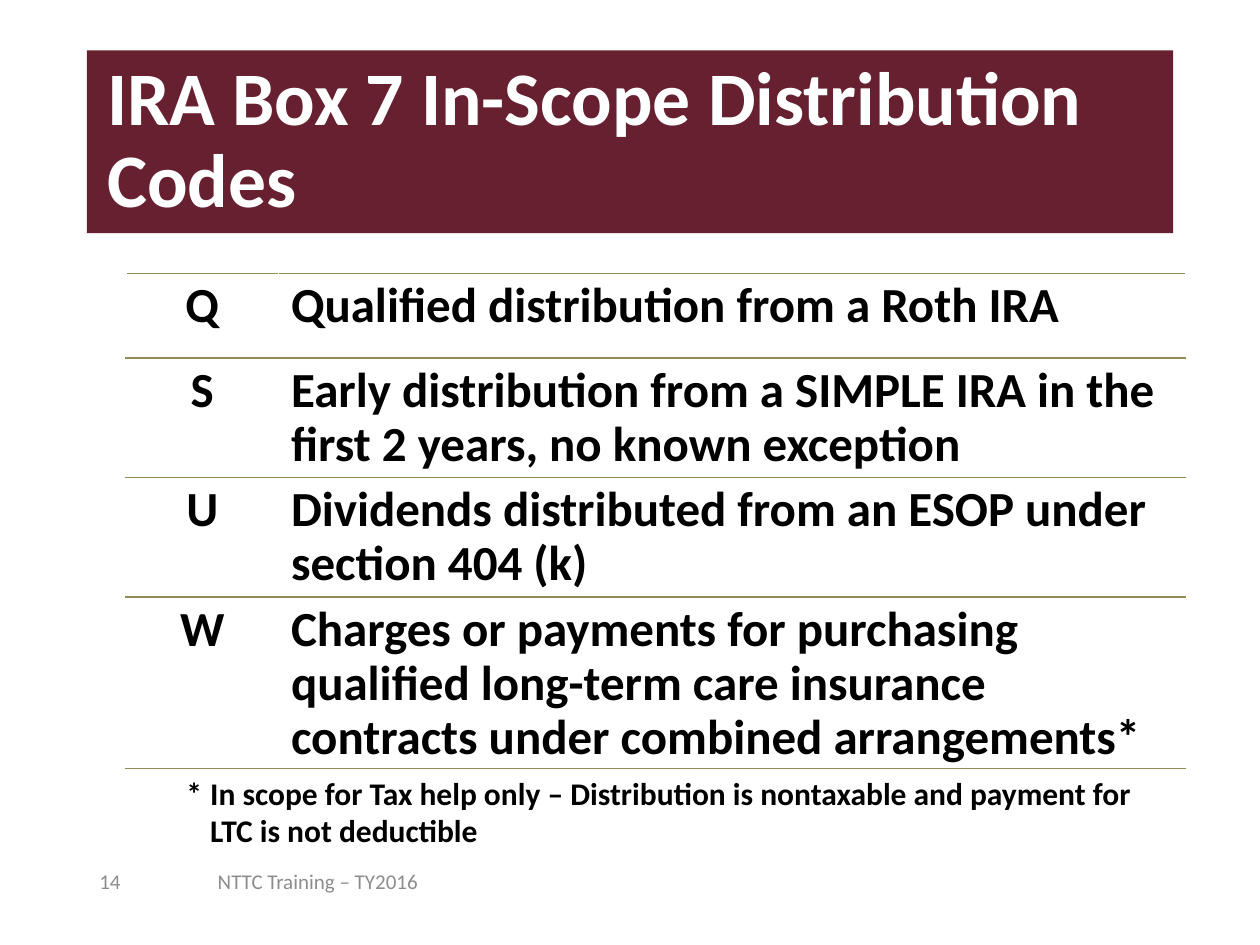
import pptx
import pptx.util
import pptx.dml.color
import pptx.enum.text
import pptx.oxml.ns
import lxml.etree

Inches = pptx.util.Inches
ALIGN = pptx.enum.text.PP_ALIGN
MIDDLE = pptx.enum.text.MSO_ANCHOR.MIDDLE


def color(hex_code):
    return pptx.dml.color.RGBColor.from_string(hex_code)


def write(paragraph, text, size, hex_code, bold=False):
    run = paragraph.add_run()
    run.text = text
    run.font.name = "Calibri"
    run.font.size = pptx.util.Pt(size)
    run.font.bold = bold
    run.font.color.rgb = color(hex_code)


deck = pptx.Presentation()
deck.slide_width = Inches(10)
deck.slide_height = Inches(7.5)
slide = deck.slides.add_slide(deck.slide_layouts[5])

title = slide.shapes.title
title.left, title.top = Inches(0.69), Inches(0.4)
title.width, title.height = Inches(8.62), Inches(1.45)
title.fill.solid()
title.fill.fore_color.rgb = color("67202F")
title.text_frame.word_wrap = True
title.text_frame.auto_size = pptx.enum.text.MSO_AUTO_SIZE.NONE
title.text_frame.vertical_anchor = MIDDLE
heading = title.text_frame.paragraphs[0]
heading.alignment = ALIGN.LEFT
heading.line_spacing = 0.9
heading._p.get_or_add_pPr().set("marL", str(Inches(0.06)))
write(heading, "IRA Box 7 In-Scope Distribution Codes", 43.2, "FFFFFF", True)

for left, width, text in [(1.63, 3.77, "NTTC Training – TY2016"), (0.69, 0.7, "14")]:
    footer = slide.shapes.add_textbox(Inches(left), Inches(6.79), Inches(width), Inches(0.4))
    footer.text_frame.word_wrap = True
    footer.text_frame.vertical_anchor = MIDDLE
    write(footer.text_frame.paragraphs[0], text, 12, "8C8C8C")

codes = [
    ("Q", "Qualified distribution from a Roth IRA", 0.67),
    ("S", "Early distribution from a SIMPLE IRA in the first 2 years, no known exception", 0.95),
    ("U", "Dividends distributed from an ESOP under section 404 (k)", 0.95),
    ("W", "Charges or payments for purchasing qualified long-term care insurance "
          "contracts under combined arrangements*", 1.34),
]
code_table = slide.shapes.add_table(
    len(codes), 2, Inches(1), Inches(2.17), Inches(8.41), Inches(3.91)).table
code_table.first_row = False
code_table.horz_banding = False
code_table.columns[0].width = Inches(1.21)
code_table.columns[1].width = Inches(7.2)

for row, (code, meaning, height) in enumerate(codes):
    code_table.rows[row].height = Inches(height)
    for column, text in enumerate([code, meaning]):
        cell = code_table.cell(row, column)
        paragraph = cell.text_frame.paragraphs[0]
        paragraph.alignment = ALIGN.LEFT if column else ALIGN.CENTER
        paragraph.line_spacing = 0.9
        write(paragraph, text, 28, "000000", True)
        properties = cell._tc.get_or_add_tcPr()
        for side in ["a:lnT", "a:lnB"]:
            border = lxml.etree.SubElement(
                properties, pptx.oxml.ns.qn(side), w=str(pptx.util.Pt(1)))
            paint = lxml.etree.SubElement(border, pptx.oxml.ns.qn("a:solidFill"))
            lxml.etree.SubElement(paint, pptx.oxml.ns.qn("a:srgbClr"), val="948A54")
        cell.fill.background()

footnote = slide.shapes.add_textbox(Inches(1.38), Inches(6.09), Inches(7.89), Inches(0.71))
footnote.text_frame.word_wrap = True
note = footnote.text_frame.paragraphs[0]
indent = note._p.get_or_add_pPr()
indent.set("marL", str(Inches(0.19)))
indent.set("indent", str(-Inches(0.19)))
write(note, "*\tIn scope for Tax help only – Distribution is nontaxable and payment for "
            "LTC is not deductible", 18, "000000", True)

deck.save("out.pptx")
